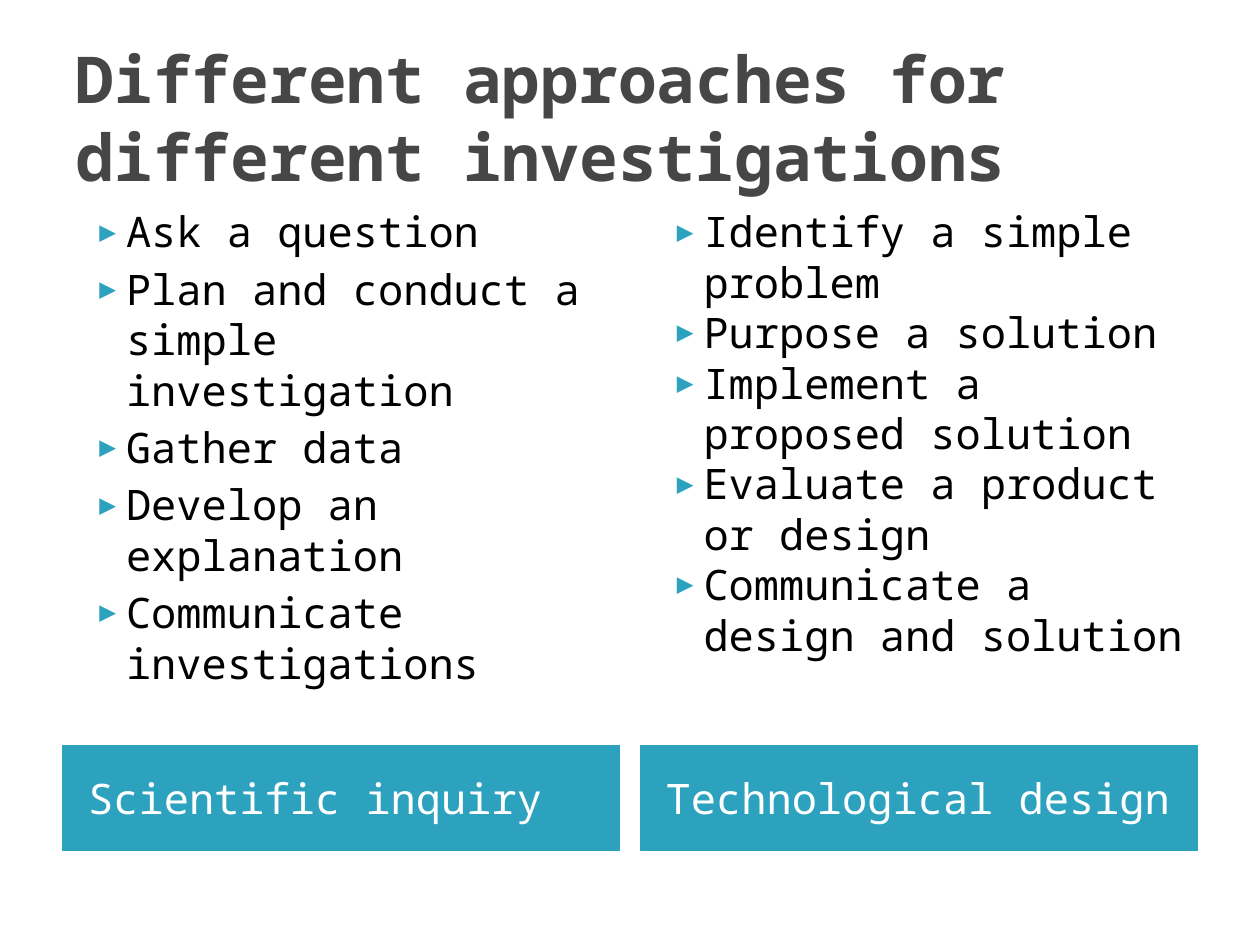
"""Build a slide comparing the steps of scientific inquiry and technological design."""
from lxml.etree import SubElement
from pptx import Presentation
from pptx.dml.color import RGBColor
from pptx.enum.text import MSO_ANCHOR as Anchor, MSO_AUTO_SIZE as AutoSize, PP_ALIGN as Align
from pptx.oxml.ns import qn
from pptx.util import Pt

COLORS = {"teal": "2DA2BF", "title": "464646", "text": "000000", "white": "FFFFFF"}
FONT = "Noto Sans Mono"
LEFT, COL_W, GAP = 36, 318, 12
COLUMNS = [
    ("Scientific inquiry", 4, [
        "Ask a question",
        "Plan and conduct a simple investigation",
        "Gather data",
        "Develop an explanation",
        "Communicate investigations",
    ]),
    ("Technological design", 0, [
        "Identify a simple problem",
        "Purpose a solution",
        "Implement a proposed solution",
        "Evaluate a product or design",
        "Communicate a design and solution",
    ]),
]


def rgb(name):
    return RGBColor.from_string(COLORS[name])


class ComparisonSlide:
    def __init__(self, prs):
        self.slide = prs.slides.add_slide(prs.slide_layouts[4])

    def fill_text(self, idx, box, lines, size, color, bold=False, anchor=Anchor.TOP, gap=0, bullet=False):
        sp = self.slide.placeholders[idx]
        for name, value in zip(("left", "top", "width", "height"), box):
            setattr(sp, name, Pt(value))
        tf = sp.text_frame
        tf.text = "\n".join(lines)
        frame = {"word_wrap": True, "auto_size": AutoSize.NONE, "vertical_anchor": anchor}
        for name, value in frame.items():
            setattr(tf, name, value)
        for i, p in enumerate(tf.paragraphs):
            if bullet:
                self.add_bullet(p)
            p.alignment = Align.LEFT
            p.space_before = Pt(gap if i else 0)
            for r in p.runs:
                for name, value in {"name": FONT, "size": Pt(size), "bold": bold}.items():
                    setattr(r.font, name, value)
                r.font.color.rgb = rgb(color)
        return sp

    def add_bullet(self, p):
        pPr = p._p.get_or_add_pPr()
        pPr.set("marL", str(Pt(28.8)))
        pPr.set("indent", str(Pt(-20.16)))
        clr = SubElement(pPr, qn("a:buClr"))
        SubElement(clr, qn("a:srgbClr"), val=COLORS["teal"])
        SubElement(pPr, qn("a:buSzPct"), val="68000")
        SubElement(pPr, qn("a:buFont"), typeface=FONT)
        SubElement(pPr, qn("a:buChar"), char="▶")

    def title(self, text):
        box = (LEFT, 21.6, 2 * COL_W + GAP, 90)
        self.fill_text(0, box, [text], 36.9, "title", bold=True, anchor=Anchor.MIDDLE)

    def header(self, idx, left, text):
        sp = self.fill_text(idx, (left, 426, COL_W, 60), [text], 24, "white", anchor=Anchor.MIDDLE)
        sp.text_frame.margin_left = Pt(14.4)
        sp.fill.solid()
        sp.fill.fore_color.rgb = rgb("teal")
        sp.line.color.rgb = rgb("teal")
        sp.line.width = Pt(0.75)

    def steps(self, idx, left, lines, gap):
        self.fill_text(idx, (left, 114, COL_W, 310), lines, 24, "text", gap=gap, bullet=True)


def main():
    prs = Presentation()
    prs.slide_width, prs.slide_height = Pt(720), Pt(540)
    s = ComparisonSlide(prs)
    s.title("Different approaches for different investigations")
    for i, (name, gap, lines) in enumerate(COLUMNS):
        left = LEFT + i * (COL_W + GAP)
        s.header(2 * i + 1, left, name)
        s.steps(2 * i + 2, left, lines, gap)
    prs.save("out.pptx")


if __name__ == "__main__":
    main()
